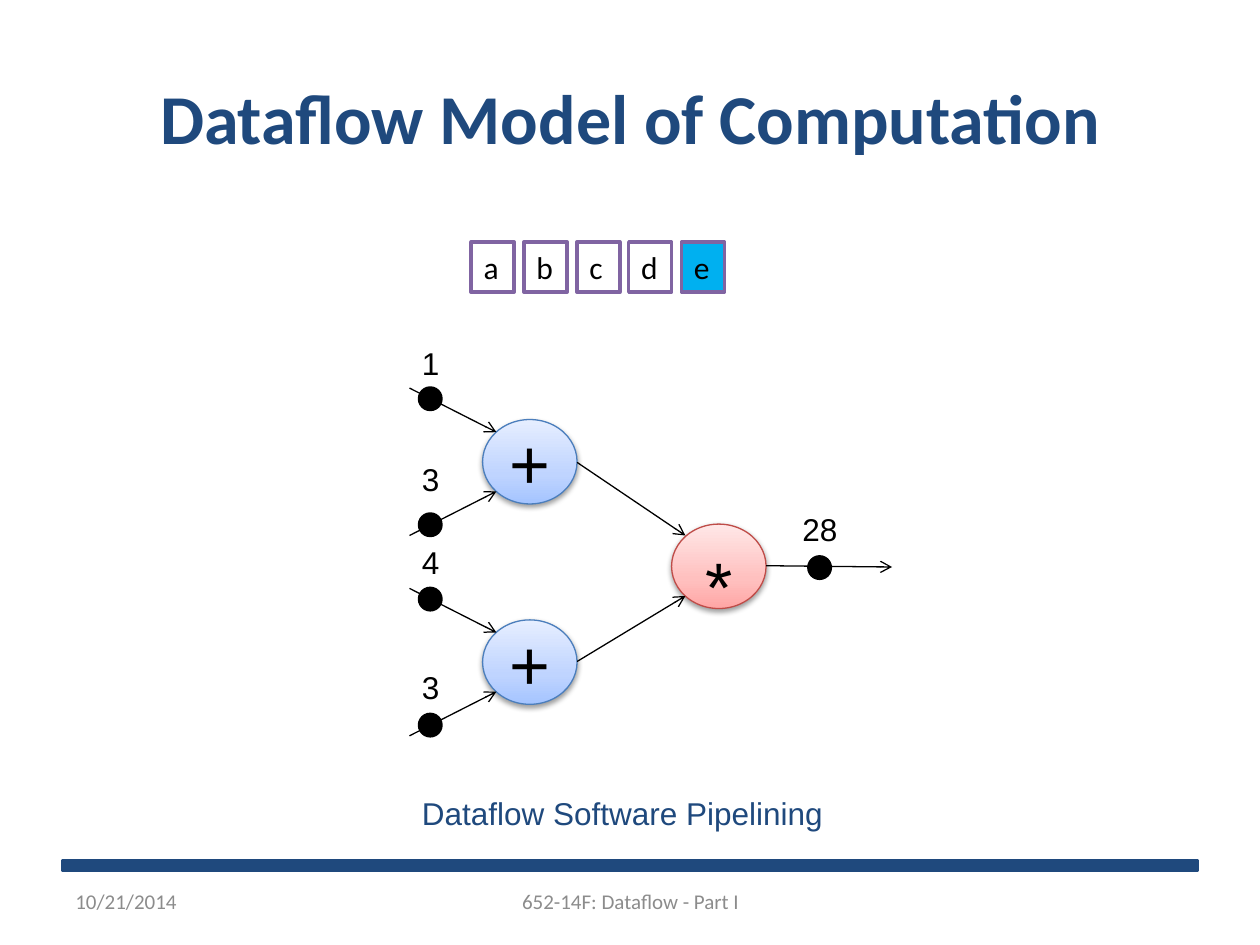
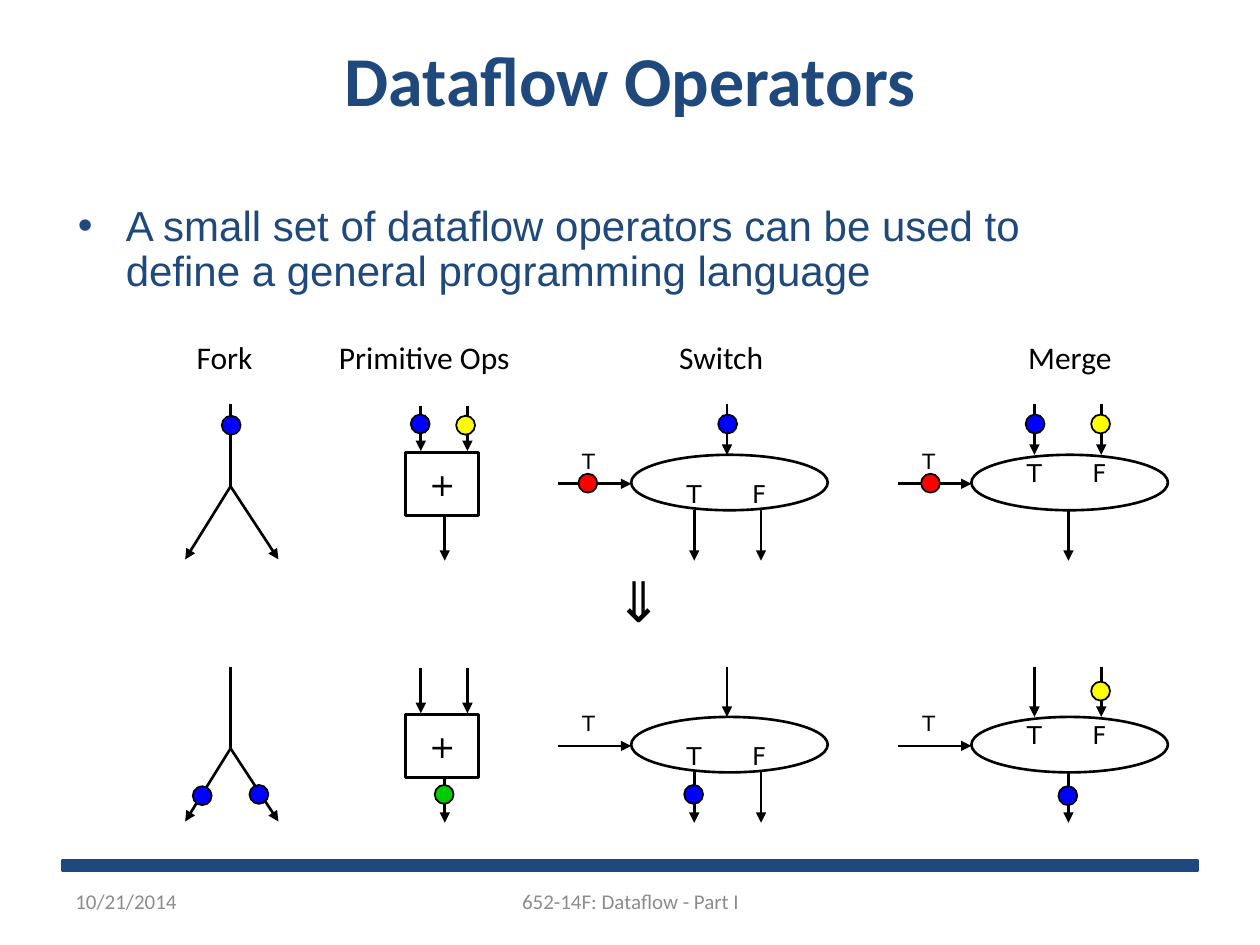
from copy import deepcopy
from lxml.etree import SubElement as Sub
from pptx import Presentation
from pptx.dml.color import RGBColor as RGB
from pptx.enum.shapes import MSO_CONNECTOR as Link, MSO_SHAPE as Kind
from pptx.enum.text import MSO_ANCHOR as Anchor, MSO_AUTO_SIZE as Fit, PP_ALIGN as Align
from pptx.oxml.ns import qn
from pptx.util import Pt

PX = 9144
HUES = {
    "navy": "1F497D", "gray": "8C8C8C", "black": "000000", "white": "FFFFFF",
    "violet": "8064A2", "sky": "00B0F0", "blue": "0000FF", "yellow": "FFFF00",
    "red": "FF0000", "green": "00CC00", "steel": "4B7EBC", "brick": "BF4C48",
}
FADES = {
    "steel": ("A4C4FF", "BFD4FF", "E6EEFF"),
    "brick": ("FFA6A5", "FFC0BF", "FFE7E7"),
}
WIDE = (10, 5, 10, 5)
TIGHT = (7, 3, 7, 3)
SIDES = ("left", "top", "right", "bottom")


def hue(name):
    return RGB.from_string(HUES[name])


def emu(box):
    return [n * PX for n in box]


def style(item, look):
    for key, value in look.items():
        setattr(item, key, value)


def write(shape, words, size, face, tint="black", mid=False, align=Align.LEFT,
          inset=WIDE, wrap=False, grow=False, space=None, bold=False):
    frame = shape.text_frame
    style(frame, {
        "word_wrap": wrap,
        "auto_size": Fit.SHAPE_TO_FIT_TEXT if grow else Fit.NONE,
        "vertical_anchor": Anchor.MIDDLE if mid else Anchor.TOP,
    })
    style(frame, {f"margin_{side}": n * PX for side, n in zip(SIDES, inset)})
    para = frame.paragraphs[0]
    style(para, {"alignment": align, "line_spacing": space})
    run = para.add_run()
    run.text = words
    style(run.font, {"name": face, "size": Pt(size), "bold": bold})
    run.font.color.rgb = hue(tint)
    return para


def label(slide, box, words, size, face, **look):
    shape = slide.shapes.add_textbox(*emu(box))
    write(shape, words, size, face, **look)
    return shape


def form(slide, kind, box, fill=None, edge="black", width=1.5):
    shape = slide.shapes.add_shape(kind, *emu(box))
    shape.shadow.inherit = False
    if fill:
        shape.fill.solid()
        shape.fill.fore_color.rgb = hue(fill)
    else:
        shape.fill.background()
    shape.line.color.rgb = hue(edge)
    shape.line.width = Pt(width)
    return shape


def line(slide, start, end, head="triangle", width=1.5):
    link = slide.shapes.add_connector(Link.STRAIGHT, *emu(start + end))
    link.line.color.rgb = hue("black")
    link.line.width = Pt(width)
    props = link._element.spPr
    if head:
        Sub(props.find(qn("a:ln")), qn("a:tailEnd"), type=head)
    Sub(props, qn("a:effectLst"))


def frame(deck, title, top):
    slide = deck.slides.add_slide(deck.slide_layouts[6])
    form(slide, Kind.RECTANGLE, (50, 683, 900, 8), "navy", "navy", 2)
    label(slide, (0, top, 1000, 125), title, 40, "Calibri", tint="navy",
          mid=True, align=Align.CENTER, wrap=True, bold=True)
    feet = (
        ((342, 695, 317, 40), "652-14F: Dataflow - Part I", Align.CENTER),
        ((50, 695, 233, 40), "10/21/2014", Align.LEFT),
    )
    for box, words, align in feet:
        label(slide, box, words, 12, "Calibri", tint="gray", mid=True,
              align=align, wrap=True)
    return slide


def node(slide, x, y, sign, edge, mid):
    shape = form(slide, Kind.OVAL, (x, y, 75, 67), None, edge, 0.75)
    shape.fill.gradient()
    shape.fill.gradient_angle = 90
    props = shape._element.spPr
    stops = props.find(".//" + qn("a:gsLst"))
    stops.append(deepcopy(stops[0]))
    for stop, place, tone in zip(shape.fill.gradient_stops, (0, 0.35, 1), FADES[edge]):
        stop.position = place
        stop.color.rgb = RGB.from_string(tone)
    glow = Sub(props.find(qn("a:effectLst")), qn("a:outerShdw"), blurRad="40000",
               dist="20000", dir="5400000", rotWithShape="0")
    shade = Sub(glow, qn("a:srgbClr"), val=HUES["black"])
    Sub(shade, qn("a:alpha"), val="38000")
    write(shape, sign, 40, "Arial", mid=mid, align=Align.CENTER)


def wire(slide, start, end):
    line(slide, start, end, "arrow", 0.75)


def dot(slide, x, y):
    form(slide, Kind.OVAL, (x, y, 17, 17), "black", "black", 2)


def value(slide, x, y, words, width=34):
    label(slide, (x, y, width, 40), words, 18, "Arial", grow=True)


def summer(slide, x, y, inputs):
    node(slide, x + 58, y + 25, "+", "steel", True)
    wire(slide, (x, y), (x + 69, y + 35))
    wire(slide, (x, y + 117), (x + 69, y + 82))
    for drop, (words, lift) in zip((0, 100), inputs):
        dot(slide, x + 8, y + drop)
        value(slide, x, y + lift, words)


def queue(slide, x, y, names, live):
    for i, name in enumerate(names):
        cell = form(slide, Kind.RECTANGLE, (x + round(41.75 * i), y, 34, 40),
                    "sky" if name == live else "white", "violet", 2)
        write(cell, name, 18, "Calibri", grow=True)


def model(deck):
    slide = frame(deck, "Dataflow Model of Computation", 30)
    queue(slide, 374, 192, "abcde", "e")
    summer(slide, 325, 308, (("1", -40), ("3", 52)))
    summer(slide, 325, 467, (("4", -41), ("3", 58)))
    node(slide, 533, 416, "*", "brick", False)
    wire(slide, (458, 367), (544, 425))
    wire(slide, (458, 525), (544, 473))
    wire(slide, (608, 449), (708, 450))
    dot(slide, 642, 442)
    value(slide, 627, 400, "28", 48)
    label(slide, (325, 625, 341, 40), "Dataflow Software Pipelining", 18,
          "Arial", tint="navy", grow=True)


def fork(slide, x, y):
    line(slide, (x + 36, y), (x + 36, y + 65), None)
    for end in (x, x + 74):
        line(slide, (x + 36, y + 65), (end, y + 123))


def prim(slide, x, y):
    box = form(slide, Kind.RECTANGLE, (x, y + 38, 58, 50))
    write(box, "+", 18, "DejaVu Sans", mid=True, align=Align.CENTER)
    for side in (12, 49):
        line(slide, (x + side, y + 1), (x + side, y + 37))
    line(slide, (x + 31, y + 87), (x + 31, y + 124))


def mark(slide, box, words, size):
    label(slide, box, words, size, "DejaVu Sans", inset=TIGHT, grow=True, space=0.85)


def gate(slide, x, y, ins, outs, drop):
    form(slide, Kind.OVAL, (x + 58, y + 40, 156, 44))
    line(slide, (x, y + 63), (x + 58, y + 63))
    for side in ins:
        line(slide, (x + side, y), (x + side, y + 40))
    for side in outs:
        line(slide, (x + side, y + 84), (x + side, y + 124))
    for side, words in ((95, "T"), (147, "F")):
        mark(slide, (x + side, y + drop, 26, 25), words, 14)
    mark(slide, (x + 12, y + 35, 24, 23), "T", 12)


def row(slide, y, tokens):
    fork(slide, 147, y)
    prim(slide, 322, y)
    gate(slide, 443, y, (134,), (108, 161), 60)
    gate(slide, 713, y, (108, 161), (135,), 43)
    for x, drop, fill in tokens:
        form(slide, Kind.OVAL, (x, y + drop, 15, 15), fill, "black", 1)


def bullet(slide, box, words):
    shape = slide.shapes.add_textbox(*emu(box))
    para = write(shape, words, 24, "Arial", tint="navy", wrap=True, space=0.9)
    props = para._p.get_or_add_pPr()
    props.set("marL", str(38 * PX))
    props.set("indent", str(-38 * PX))
    Sub(props, qn("a:buFont"), typeface="Arial")
    Sub(props, qn("a:buChar"), char="•")


def tools(deck):
    slide = frame(deck, "Dataflow Operators", 0)
    bullet(slide, (52, 158, 801, 116), "A small set of dataflow operators can be "
           "used to define a general programming language")
    heads = (("Fork", 149, 64), ("Primitive Ops", 262, 162),
             ("Switch", 532, 88), ("Merge", 809, 85))
    for words, x, width in heads:
        label(slide, (x, 269, width, 32), words, 18, "Calibri", inset=TIGHT,
              grow=True, space=0.87)
    row(slide, 321, (
        (176, 9, "blue"), (326, 8, "blue"), (362, 9, "yellow"), (570, 8, "blue"),
        (814, 8, "blue"), (866, 8, "yellow"), (459, 55, "red"), (731, 55, "red"),
    ))
    row(slide, 529, (
        (198, 94, "blue"), (153, 95, "blue"), (345, 94, "green"),
        (543, 94, "blue"), (840, 95, "blue"), (866, 12, "yellow"),
    ))
    arrow = label(slide, (478, 455, 58, 52), "⇒", 32, "DejaVu Sans",
                  inset=TIGHT, grow=True, space=0.87)
    arrow.rotation = 90


def main():
    deck = Presentation()
    style(deck, {"slide_width": 1000 * PX, "slide_height": 750 * PX})
    model(deck)
    tools(deck)
    deck.save("out.pptx")


if __name__ == "__main__":
    main()
